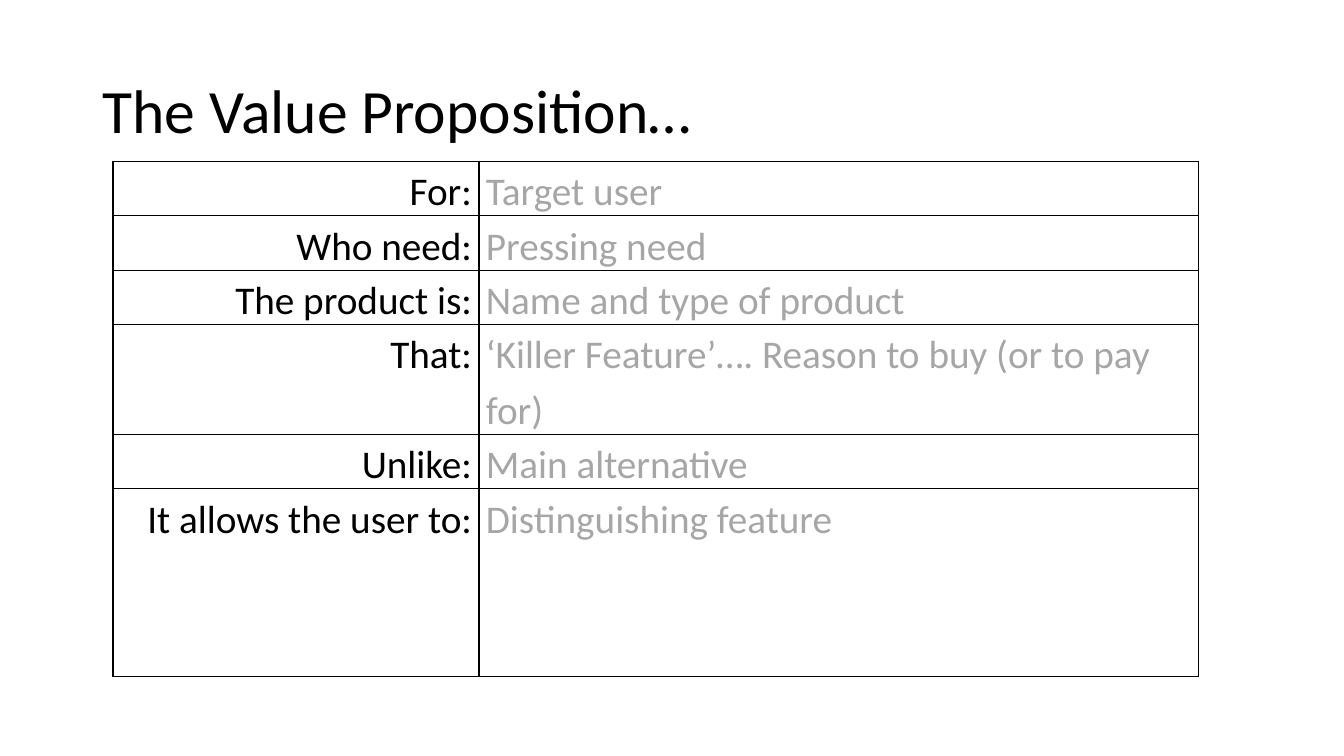
from lxml import etree
from pptx import Presentation
from pptx import util as u
from pptx.dml.color import RGBColor
from pptx.enum import text
from pptx.oxml.ns import qn

COLORS = {"ink": "000000", "hint": "A6A6A6"}
ROWS = [
    ("For:", "Target user"),
    ("Who need:", "Pressing need"),
    ("The product is:", "Name and type of product"),
    ("That:", "‘Killer Feature’…. Reason to buy (or to pay for)"),
    ("Unlike:", "Main alternative"),
    ("It allows the user to:", "Distinguishing feature"),
]
WIDTHS = [3.63, 7.14]
HEIGHTS = [0.54, 0.54, 0.54, 1.09, 0.54, 1.86]


def write(frame, words, size=28, color="ink", align="LEFT", spacing=1.15):
    para = frame.paragraphs[0]
    para.alignment = getattr(text.PP_ALIGN, align)
    para.line_spacing = spacing
    run = para.add_run()
    run.text = words
    run.font.name = "Calibri"
    run.font.size = u.Pt(size)
    run.font.color.rgb = RGBColor.from_string(COLORS[color])


def border(cell, color="ink", width=1):
    """Draw a solid line on all four sides of a cell."""
    props = cell._tc.get_or_add_tcPr()
    for place, side in enumerate(("lnL", "lnR", "lnT", "lnB")):
        line = etree.Element(qn(f"a:{side}"), w=str(u.Pt(width)))
        fill = etree.SubElement(line, qn("a:solidFill"))
        etree.SubElement(fill, qn("a:srgbClr"), val=COLORS[color])
        props.insert(place, line)


class Deck:
    def __init__(self, width, height):
        self.prs = Presentation()
        self.prs.slide_width = u.Inches(width)
        self.prs.slide_height = u.Inches(height)
        self.slide = self.prs.slides.add_slide(self.prs.slide_layouts[6])

    def title(self, words, *box):
        shape = self.slide.shapes.add_textbox(*map(u.Inches, box))
        frame = shape.text_frame
        frame.word_wrap = True
        frame.vertical_anchor = text.MSO_ANCHOR.MIDDLE
        write(frame, words, size=44, spacing=0.9)

    def table(self, rows, left, top, widths, heights):
        box = map(u.Inches, (left, top, sum(widths), sum(heights)))
        table = self.slide.shapes.add_table(len(rows), len(widths), *box).table
        table.first_row = table.horz_banding = False
        for column, width in zip(table.columns, widths):
            column.width = u.Inches(width)
        for row, height, (label, hint) in zip(table.rows, heights, rows):
            row.height = u.Inches(height)
            for cell in row.cells:
                cell.margin_left = cell.margin_right = u.Inches(0.07)
                cell.margin_top = cell.margin_bottom = 0
                cell.fill.background()
                border(cell)
            write(row.cells[0].text_frame, label, align="RIGHT")
            write(row.cells[1].text_frame, hint, color="hint")


def main():
    deck = Deck(13.33, 7.5)
    deck.title("The Value Proposition…", 0.92, 0.4, 11.5, 1.45)
    deck.table(ROWS, 1.12, 1.6, WIDTHS, HEIGHTS)
    deck.prs.save("out.pptx")


if __name__ == "__main__":
    main()
